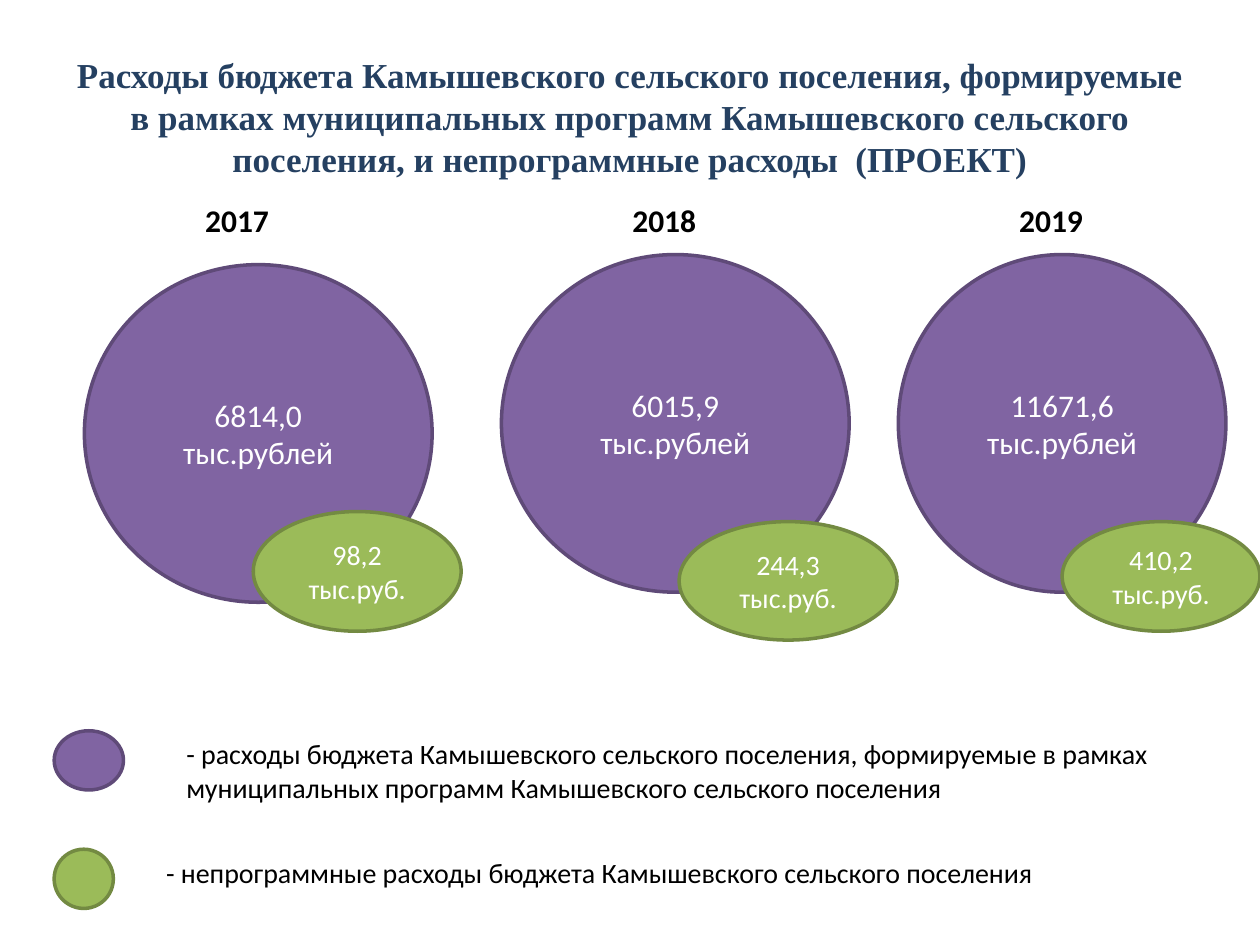
from pptx import Presentation
from pptx.dml.color import RGBColor
from pptx.enum.shapes import MSO_SHAPE
from pptx.enum.text import MSO_ANCHOR, PP_ALIGN
from pptx.util import Inches, Pt

COLORS = {
    "title": "254061", "text": "000000", "light": "FFFFFF",
    "program": "8064A2", "program_line": "5F4A78",
    "other": "9BBB59", "other_line": "738A42",
}

# Content: boxes are left, top, width, height in inches
TITLE = ("Расходы бюджета Камышевского сельского поселения, формируемые "
         "в рамках муниципальных программ Камышевского сельского поселения, "
         "и непрограммные расходы  (ПРОЕКТ)")
YEARS = [
    {"year": "2017", "label_left": 1.53,
     "program": (["6814,0 тыс.рублей"], (0.67, 2.1, 2.76, 2.68)),
     "other": (["98,2 тыс.руб."], (2.01, 4.06, 1.65, 0.95))},
    {"year": "2018", "label_left": 4.92,
     "program": (["6015,9 тыс.рублей"], (3.98, 2.02, 2.76, 2.68)),
     "other": (["244,3", "тыс.руб."], (5.39, 4.14, 1.73, 0.94))},
    {"year": "2019", "label_left": 7.99,
     "program": (["11671,6", "тыс.рублей"], (7.13, 2.02, 2.6, 2.68)),
     "other": (["410,2 тыс.руб."], (8.43, 4.14, 1.57, 0.87))},
]
LEGEND = [
    ("program", (0.43, 5.8, 0.55, 0.47), (1.38, 5.8, 7.95, 0.64),
     "- расходы бюджета Камышевского сельского поселения, формируемые в рамках "
     "муниципальных программ Камышевского сельского поселения"),
    ("other", (0.43, 6.74, 0.47, 0.47), (1.22, 6.74, 7.95, 0.37),
     "- непрограммные расходы бюджета Камышевского сельского поселения"),
]
SIZES = {"program": 18, "other": 16}


def color(name):
    return RGBColor.from_string(COLORS[name])


def write(shape, lines, size=16, font="Calibri", ink="text", bold=False,
          align=PP_ALIGN.LEFT, anchor=MSO_ANCHOR.TOP):
    frame = shape.text_frame
    frame.word_wrap = True
    frame.vertical_anchor = anchor
    for index, line in enumerate(lines):
        para = frame.add_paragraph() if index else frame.paragraphs[0]
        para.alignment = align
        span = para.add_run()
        span.text = line
        span.font.name = font
        span.font.size = Pt(size)
        span.font.bold = bold
        span.font.color.rgb = color(ink)


def add_text(page, box, lines, **style):
    write(page.shapes.add_textbox(*map(Inches, box)), lines, **style)


def add_ellipse(page, kind, box):
    ellipse = page.shapes.add_shape(MSO_SHAPE.OVAL, *map(Inches, box))
    ellipse.shadow.inherit = False
    ellipse.fill.solid()
    ellipse.fill.fore_color.rgb = color(kind)
    ellipse.line.color.rgb = color(kind + "_line")
    ellipse.line.width = Pt(2)
    return ellipse


def main():
    deck = Presentation()
    deck.slide_width, deck.slide_height = Inches(10), Inches(7.5)
    page = deck.slides.add_slide(deck.slide_layouts[6])

    # Title
    add_text(page, (0.5, 0.3, 9, 1.25), [TITLE], size=20, font="Times New Roman",
             ink="title", bold=True, align=PP_ALIGN.CENTER, anchor=MSO_ANCHOR.MIDDLE)

    # Spending by year: all large circles first, the small ones over them
    for kind, size in SIZES.items():
        for entry in YEARS:
            lines, box = entry[kind]
            write(add_ellipse(page, kind, box), lines, size=size, ink="light",
                  align=PP_ALIGN.CENTER, anchor=MSO_ANCHOR.MIDDLE)

    # Year labels
    for entry in YEARS:
        add_text(page, (entry["label_left"], 1.55, 0.79, 0.4), [entry["year"]],
                 size=18, bold=True)

    # Legend
    for kind, marker_box, text_box, text in LEGEND:
        add_ellipse(page, kind, marker_box)
        add_text(page, text_box, [text])

    deck.save("out.pptx")


if __name__ == "__main__":
    main()
